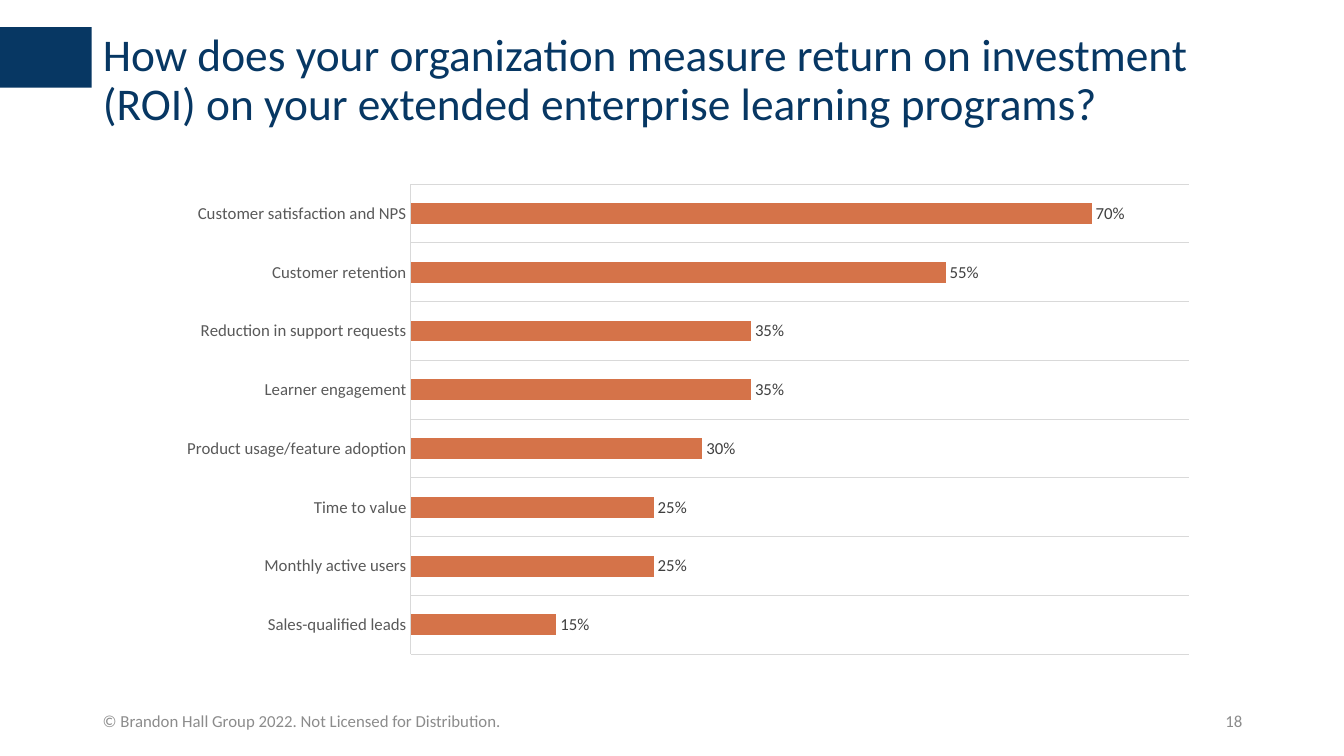
from lxml import etree
from pptx import Presentation
from pptx.chart.data import CategoryChartData
from pptx.dml.color import RGBColor
from pptx.enum.chart import XL_CHART_TYPE, XL_LABEL_POSITION, XL_TICK_MARK
from pptx.enum.shapes import MSO_SHAPE
from pptx.enum.text import MSO_ANCHOR, MSO_AUTO_SIZE, PP_ALIGN
from pptx.oxml.ns import qn
from pptx.util import Inches, Pt

NAVY = RGBColor(0x07, 0x37, 0x63)
ORANGE = RGBColor(0xD5, 0x73, 0x49)
FOOTER_GRAY = RGBColor(0x8C, 0x8C, 0x8C)
AXIS_GRAY = RGBColor(0x59, 0x59, 0x59)
LABEL_GRAY = RGBColor(0x40, 0x40, 0x40)
LINE_GRAY = RGBColor(0xD9, 0xD9, 0xD9)


def style_font(font, size, color):
    font.name = "Calibri"
    font.size = Pt(size)
    font.color.rgb = color


deck = Presentation()
deck.slide_width = Inches(13.33)
deck.slide_height = Inches(7.5)
page = deck.slides.add_slide(deck.slide_layouts.get_by_name("Title Only"))

# Accent block and title
accent = page.shapes.add_shape(
    MSO_SHAPE.RECTANGLE, Inches(-0.01), Inches(0.27), Inches(0.92), Inches(0.6)
)
accent.shadow.inherit = False
accent.fill.solid()
accent.fill.fore_color.rgb = NAVY
accent.line.fill.background()

title = page.shapes.title
title.left, title.top = Inches(0.92), Inches(0.27)
title.width, title.height = Inches(11.5), Inches(1.58)
title.text_frame.text = (
    "How does your organization measure return on investment (ROI) "
    "on your extended enterprise learning programs?"
)
title.text_frame.auto_size = MSO_AUTO_SIZE.NONE
title.text_frame.vertical_anchor = MSO_ANCHOR.TOP
heading = title.text_frame.paragraphs[0]
heading.alignment = PP_ALIGN.LEFT
heading.line_spacing = 0.9
style_font(heading.font, 32.4, NAVY)

# Chart, listed from the bottom bar to the top
measures = [
    ("Sales-qualified leads", 0.15),
    ("Monthly active users", 0.25),
    ("Time to value", 0.25),
    ("Product usage/feature adoption", 0.3),
    ("Learner engagement", 0.35),
    ("Reduction in support requests", 0.35),
    ("Customer retention", 0.55),
    ("Customer satisfaction and NPS", 0.7),
]
data = CategoryChartData(number_format="0%")
data.categories = [name for name, share in measures]
data.add_series("Series 1", [share for name, share in measures])
chart = page.shapes.add_chart(
    XL_CHART_TYPE.BAR_CLUSTERED,
    Inches(1.65), Inches(1.73), Inches(10.35), Inches(4.86), data,
).chart
chart.has_legend = False
chart.has_title = False
chart.font.name = "Calibri"
chart.font.size = Pt(10)

plot = chart.plots[0]
plot.gap_width = 182
plot.vary_by_categories = False
bars = plot.series[0]
bars.format.fill.solid()
bars.format.fill.fore_color.rgb = ORANGE

plot.has_data_labels = True
labels = plot.data_labels
labels.show_value = True
labels.number_format = "0%"
labels.number_format_is_linked = False
labels.position = XL_LABEL_POSITION.OUTSIDE_END
style_font(labels.font, 12, LABEL_GRAY)

category_axis = chart.category_axis
category_axis.major_tick_mark = XL_TICK_MARK.NONE
category_axis.minor_tick_mark = XL_TICK_MARK.NONE
category_axis.has_major_gridlines = True
style_font(category_axis.tick_labels.font, 12, AXIS_GRAY)
for rule in (category_axis.format.line, category_axis.major_gridlines.format.line):
    rule.color.rgb = LINE_GRAY
    rule.width = Pt(0.75)

value_axis = chart.value_axis
value_axis.minimum_scale = 0
value_axis.maximum_scale = 0.8
value_axis.has_major_gridlines = False
value_axis.tick_labels.number_format = "0%"
value_axis.tick_labels.number_format_is_linked = False
value_axis.visible = False

# Fixed plot area, as fractions of the chart
plot_area = chart.element.find(".//" + qn("c:plotArea"))
layout = plot_area.find(qn("c:layout"))
if layout is None:
    layout = etree.Element(qn("c:layout"))
    plot_area.insert(0, layout)
manual = etree.SubElement(layout, qn("c:manualLayout"))
for tag, value in [
    ("layoutTarget", "inner"), ("xMode", "edge"), ("yMode", "edge"),
    ("x", "0.234"), ("y", "0.02"), ("w", "0.746"), ("h", "0.96"),
]:
    etree.SubElement(manual, qn("c:" + tag)).set("val", value)

# Footer
for left, width, text, alignment in [
    (0.92, 4.5, "© Brandon Hall Group 2022. Not Licensed for Distribution.", PP_ALIGN.LEFT),
    (9.42, 3, "18", PP_ALIGN.RIGHT),
]:
    box = page.shapes.add_textbox(Inches(left), Inches(6.95), Inches(width), Inches(0.4))
    box.text_frame.word_wrap = True
    box.text_frame.vertical_anchor = MSO_ANCHOR.MIDDLE
    box.text_frame.text = text
    paragraph = box.text_frame.paragraphs[0]
    paragraph.alignment = alignment
    style_font(paragraph.font, 12, FOOTER_GRAY)

deck.save("out.pptx")
